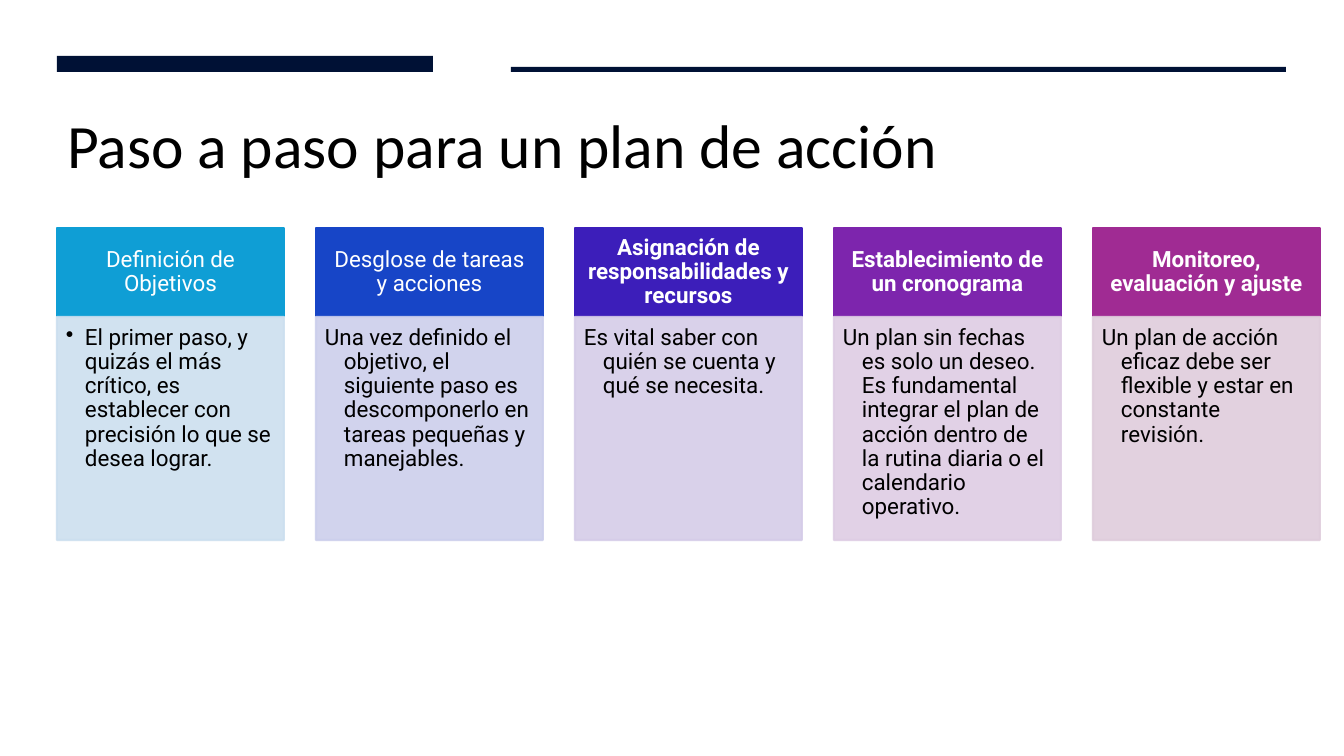
import pptx
import pptx.util
import pptx.dml.color
import pptx.enum.shapes
import pptx.enum.text
import pptx.oxml.ns
import lxml.etree

Pt = pptx.util.Pt
ALIGN = pptx.enum.text.PP_ALIGN
ANCHOR = pptx.enum.text.MSO_ANCHOR
qn = pptx.oxml.ns.qn


def px(n):
    return pptx.util.Emu(round(n * 914400 / 100.8))


def color(text):
    return pptx.dml.color.RGBColor.from_string(text)


def fade(box, percent):
    for tone in box.element.spPr.iter(qn("a:srgbClr")):
        alpha = lxml.etree.SubElement(tone, qn("a:alpha"))
        alpha.set("val", str(percent * 1000))


class Deck:
    font = "Roboto"
    size = 16
    navy = "001135"

    def __init__(self):
        self.show = pptx.Presentation()
        self.show.slide_width = px(1344)
        self.show.slide_height = px(756)
        self.slide = self.show.slides.add_slide(self.show.slide_layouts[5])

    def label(self, para, text, size, font, ink, bold=False):
        para.text = text
        para.line_spacing = 0.9
        para.font.size = Pt(size)
        para.font.name = font
        para.font.bold = bold
        para.font.color.rgb = color(ink)

    def title(self, text, x, y, w, h):
        box = self.slide.shapes.title
        box.left, box.top, box.width, box.height = map(px, (x, y, w, h))
        frame = box.text_frame
        frame.word_wrap = True
        frame.vertical_anchor = ANCHOR.MIDDLE
        para = frame.paragraphs[0]
        para.alignment = ALIGN.LEFT
        self.label(para, text, 44, "Calibri", "000000")

    def rect(self, x, y, w, h, fill, line=None):
        box = self.slide.shapes.add_shape(
            pptx.enum.shapes.MSO_SHAPE.RECTANGLE, *map(px, (x, y, w, h)))
        box.shadow.inherit = False
        box.fill.solid()
        box.fill.fore_color.rgb = color(fill)
        if line:
            box.line.color.rgb = color(line)
            box.line.width = Pt(1.5)
        else:
            box.line.fill.background()
        return box

    def inset(self, box, anchor, left, top, right, bottom):
        frame = box.text_frame
        frame.word_wrap = True
        frame.vertical_anchor = anchor
        frame.margin_left, frame.margin_top = px(left), px(top)
        frame.margin_right, frame.margin_bottom = px(right), px(bottom)
        return frame.paragraphs[0]

    def head(self, text, x, y, w, h, fill, bold):
        box = self.rect(x, y, w, h, fill, fill)
        para = self.inset(box, ANCHOR.MIDDLE, 12, 7, 12, 7)
        para.alignment = ALIGN.CENTER
        self.label(para, text, self.size, self.font, "FFFFFF", bold)

    def body(self, text, x, y, w, h, fill, bullet):
        box = self.rect(x, y, w, h, fill, fill)
        fade(box, 90)
        para = self.inset(box, ANCHOR.TOP, 9, 9, 12, 14)
        para.alignment = ALIGN.LEFT
        props = para._p.get_or_add_pPr()
        props.set("marL", str(px(19)))
        props.set("indent", str(-px(19)))
        if bullet:
            lxml.etree.SubElement(props, qn("a:buChar")).set("char", "•")
        else:
            lxml.etree.SubElement(props, qn("a:buNone"))
        self.label(para, text, self.size, self.font, "000000")


# Heading, bold heading, text, heading fill, text fill
STEPS = [
    ("Definición de Objetivos", False,
     "El primer paso, y quizás el más crítico, es establecer con precisión "
     "lo que se desea lograr.", "0F9ED5", "CCDFEF"),
    ("Desglose de tareas y acciones", False,
     "Una vez definido el objetivo, el siguiente paso es descomponerlo en "
     "tareas pequeñas y manejables.", "1745C7", "CCCFEC"),
    ("Asignación de responsabilidades y recursos", True,
     "Es vital saber con quién se cuenta y qué se necesita.",
     "3C1EBA", "D5CCE8"),
    ("Establecimiento de un cronograma", True,
     "Un plan sin fechas es solo un deseo. Es fundamental integrar el plan "
     "de acción dentro de la rutina diaria o el calendario operativo.",
     "7D25AD", "DECDE4"),
    ("Monitoreo, evaluación y ajuste", True,
     "Un plan de acción eficaz debe ser flexible y estar en constante "
     "revisión.", "A02B93", "DFCDDC"),
]


def main():
    deck = Deck()

    # Top bars and title
    deck.rect(57, 56, 376, 16, deck.navy)
    deck.rect(511, 67, 775, 5, deck.navy)
    deck.title("Paso a paso para un plan de acción", 57, 108, 1111, 82)

    # Five columns at an equal pitch
    left, pitch, width = 57, 259, 227
    for i, (name, bold, text, dark, pale) in enumerate(STEPS):
        x = left + i * pitch
        deck.head(name, x, 228, width, 88, dark, bold)
        deck.body(text, x, 317, width, 223, pale, bullet=i == 0)

    deck.show.save("out.pptx")


if __name__ == "__main__":
    main()
